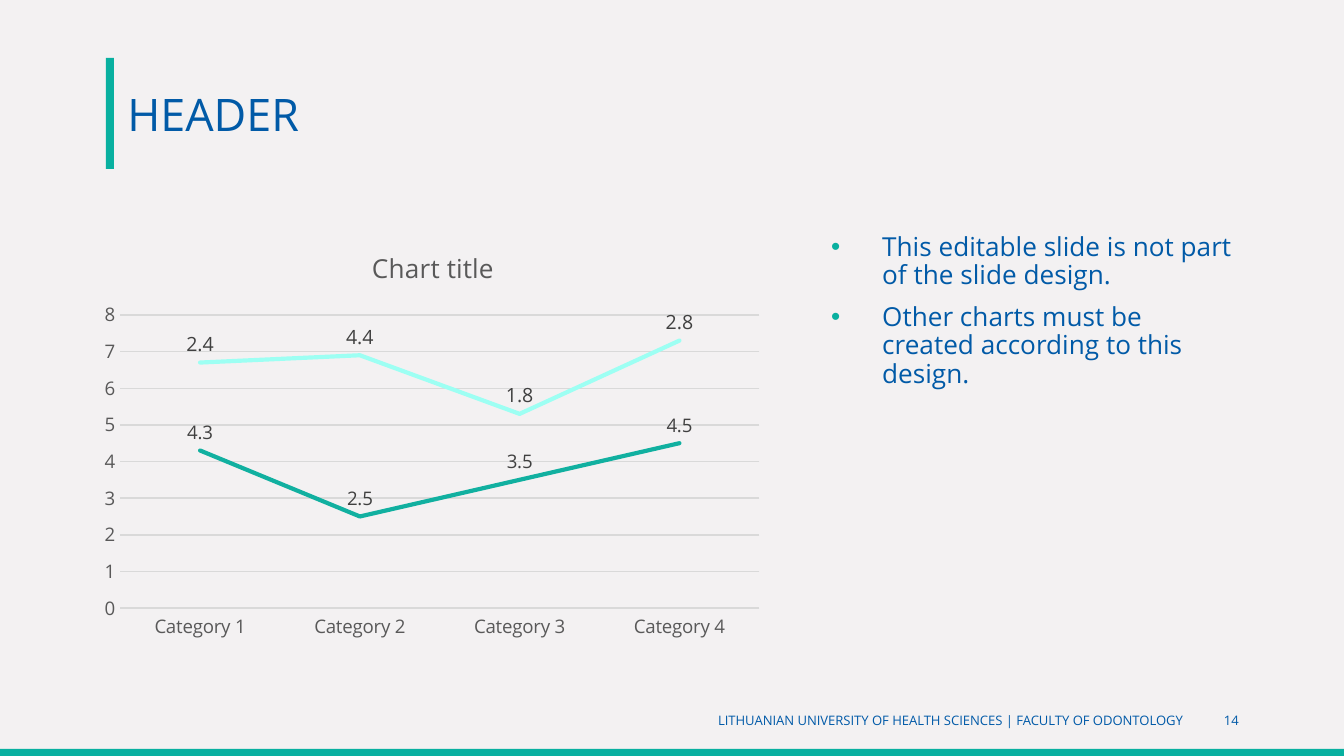
from dataclasses import dataclass

from lxml import etree
from pptx import Presentation
from pptx import util as u
from pptx.chart.data import CategoryChartData
from pptx.dml.color import RGBColor
from pptx.enum import chart as ch, shapes, text
from pptx.oxml import parse_xml
from pptx.oxml.ns import nsdecls, qn

PX = 914400 / 134.4


@dataclass(frozen=True)
class Theme:
    font: str = "Open Sans"
    paper: str = "F3F1F2"
    accent: str = "08B0A0"
    blue: str = "015AA7"
    footer_blue: str = "015AA8"
    grid: str = "D9D9D9"
    axis: str = "595959"
    label: str = "404040"
    series: tuple = ("11B0A0", "9DFFF3")
    header_pt: float = 24
    body_pt: float = 14
    chart_title_pt: float = 14
    axis_pt: float = 10
    label_pts: tuple = (10, 10.5)
    footer_pt: float = 7


T = Theme()


def px(n):
    return u.Emu(round(n * PX))


def rgb(value):
    return RGBColor.from_string(value)


def style(font, size, color):
    font.name, font.size, font.bold = T.font, u.Pt(size), False
    font.color.rgb = rgb(color)


def add_run(p, content, size, color):
    r = p.add_run()
    r.text = content
    style(r.font, size, color)


def add_bar(s, box):
    sp = s.shapes.add_shape(shapes.MSO_SHAPE.RECTANGLE, *map(px, box))
    sp.shadow.inherit = False
    sp.fill.solid()
    sp.fill.fore_color.rgb = rgb(T.accent)
    sp.line.fill.background()


def add_textbox(s, box):
    tf = s.shapes.add_textbox(*map(px, box)).text_frame
    tf.word_wrap = True
    return tf


def add_header(s, box, title):
    x, y, w, h = box
    bar = 8
    add_bar(s, (x, y, bar, h))
    sp = s.shapes.title
    sp.left, sp.top, sp.width, sp.height = map(px, (x + bar, y, w - bar, h))
    tf = sp.text_frame
    tf.vertical_anchor = text.MSO_ANCHOR.MIDDLE
    p = tf.paragraphs[0]
    p.alignment = text.PP_ALIGN.LEFT
    add_run(p, title, T.header_pt, T.blue)


def add_bullets(s, box, items):
    tf = add_textbox(s, box)
    for i, item in enumerate(items):
        p = tf.paragraphs[0] if i == 0 else tf.add_paragraph()
        p.line_spacing = 0.9
        p.space_before = u.Pt(7.5 if i else 0)
        pPr = p._p.get_or_add_pPr()
        pPr.set("marL", str(px(51)))
        pPr.set("indent", str(-px(51)))
        color = etree.SubElement(pPr, qn("a:buClr"))
        etree.SubElement(color, qn("a:srgbClr"), val=T.accent)
        etree.SubElement(pPr, qn("a:buFont"), typeface="Arial")
        etree.SubElement(pPr, qn("a:buChar"), char="•")
        add_run(p, item, T.body_pt, T.blue)


def set_plot_area(chart, x, y, w, h):
    """Fix the inner plot area, given as fractions of the chart."""
    plot_area = chart._chartSpace.chart.plotArea
    for old in plot_area.findall(qn("c:layout")):
        plot_area.remove(old)
    plot_area.insert(0, parse_xml(
        f'<c:layout {nsdecls("c")}><c:manualLayout><c:layoutTarget val="inner"/>'
        '<c:xMode val="edge"/><c:yMode val="edge"/>'
        f'<c:x val="{x}"/><c:y val="{y}"/><c:w val="{w}"/><c:h val="{h}"/>'
        '</c:manualLayout></c:layout>'))


def style_axes(chart):
    for axis in (chart.category_axis, chart.value_axis):
        axis.major_tick_mark = axis.minor_tick_mark = ch.XL_TICK_MARK.NONE
        style(axis.tick_labels.font, T.axis_pt, T.axis)
    values = chart.value_axis
    values.minimum_scale, values.maximum_scale, values.major_unit = 0, 8, 1
    values.format.line.fill.background()
    for line in (chart.category_axis.format.line, values.major_gridlines.format.line):
        line.color.rgb = rgb(T.grid)
        line.width = u.Pt(0.75)


def add_line_chart(s, box, title, categories, series):
    data = CategoryChartData(number_format="General")
    data.categories = categories
    for name, values in series.items():
        data.add_series(name, values)
    chart = s.shapes.add_chart(ch.XL_CHART_TYPE.LINE_STACKED, *map(px, box), data).chart
    chart.font.name, chart.font.size = T.font, u.Pt(T.axis_pt)
    chart.has_legend = False
    chart.has_title = True
    add_run(chart.chart_title.text_frame.paragraphs[0], title, T.chart_title_pt, T.axis)
    chart.chart_title.include_in_layout = False
    set_plot_area(chart, 0.04, 0.21, 0.94, 0.7)
    style_axes(chart)

    plot = chart.plots[0]
    plot.vary_by_categories = False
    for line_series, color, size in zip(plot.series, T.series, T.label_pts):
        line_series.smooth = False
        line_series.marker.style = ch.XL_MARKER_STYLE.NONE
        line = line_series.format.line
        line.color.rgb = rgb(color)
        line.width = u.Pt(2.25)
        line_series.format._element.spPr.find(qn("a:ln")).set("cap", "rnd")
        labels = line_series.data_labels
        labels.show_value = True
        labels.position = ch.XL_LABEL_POSITION.ABOVE
        style(labels.font, size, T.label)


def add_footer(s, box, credit, number):
    x, y, w, h = box
    number_w, gap = 48, 8
    credit_w = w - number_w - gap
    for left, width, content in ((x, credit_w, credit),
                                 (x + credit_w + gap, number_w, number)):
        tf = add_textbox(s, (left, y, width, h))
        tf.vertical_anchor = text.MSO_ANCHOR.MIDDLE
        p = tf.paragraphs[0]
        p.alignment = text.PP_ALIGN.RIGHT
        add_run(p, content, T.footer_pt, T.footer_blue)


def main():
    prs = Presentation()
    prs.slide_width, prs.slide_height = px(1344), px(756)
    s = prs.slides.add_slide(prs.slide_layouts[5])
    s.background.fill.solid()
    s.background.fill.fore_color.rgb = rgb(T.paper)

    add_bar(s, (0, 749, 1344, 7))
    add_header(s, (106, 58, 1145, 111), "HEADER")
    add_line_chart(
        s, (93, 227, 680, 419), "Chart title",
        [f"Category {n}" for n in range(1, 5)],
        {"Series 1": (4.3, 2.5, 3.5, 4.5), "Series 2": (2.4, 4.4, 1.8, 2.8)})
    add_bullets(s, (818, 227, 434, 419), (
        "This editable slide is not part of the slide design.",
        "Other charts must be created according to this design."))
    add_footer(s, (226, 700, 1026, 40),
               "LITHUANIAN UNIVERSITY OF HEALTH SCIENCES | FACULTY OF ODONTOLOGY", "14")
    prs.save("out.pptx")


if __name__ == "__main__":
    main()
